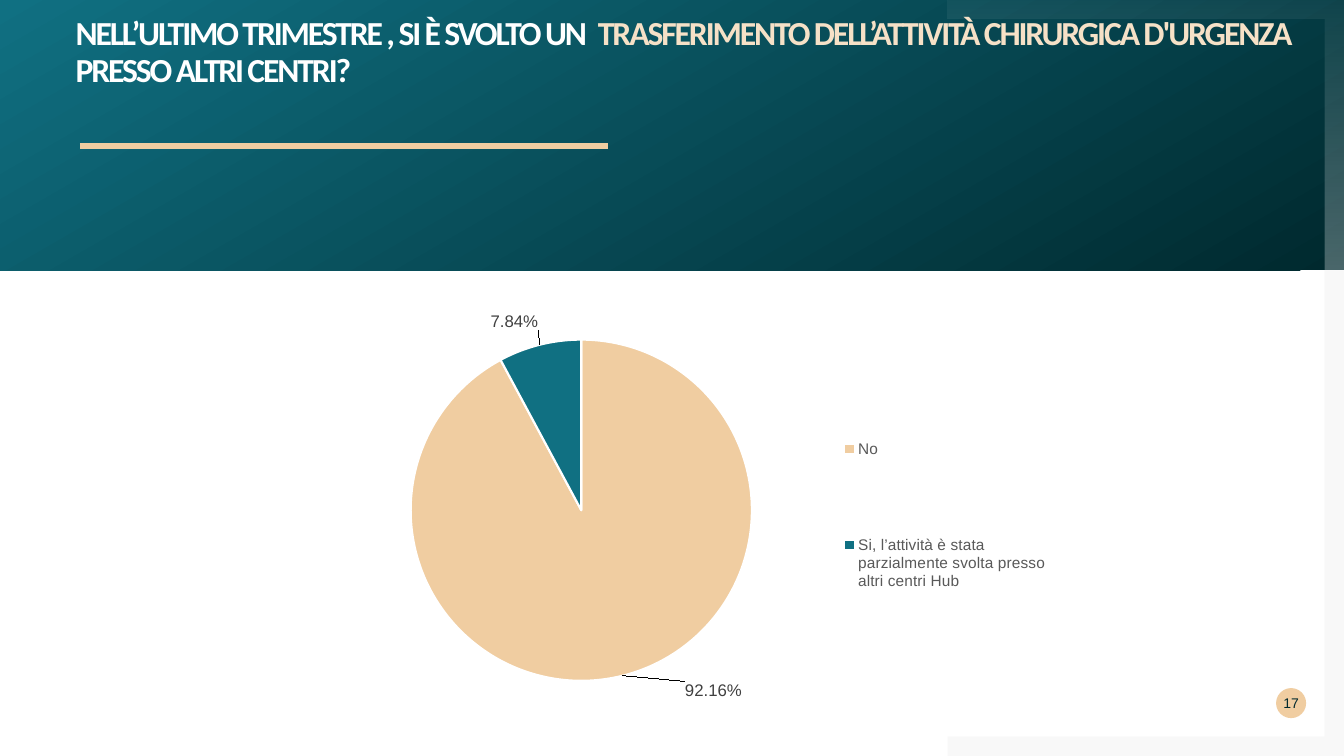
import lxml.etree
import pptx
import pptx.chart.data
import pptx.dml.color
import pptx.enum.chart
import pptx.enum.shapes
import pptx.enum.text
import pptx.oxml
import pptx.oxml.ns
import pptx.util

Pt = pptx.util.Pt
RGBColor = pptx.dml.color.RGBColor
qn = pptx.oxml.ns.qn

WHITE = RGBColor(0xFF, 0xFF, 0xFF)
GRAY = RGBColor(0x80, 0x80, 0x80)
DARK_TEAL = RGBColor(0x00, 0x29, 0x2E)
TEAL = RGBColor(0x10, 0x70, 0x82)
SAND = RGBColor(0xF0, 0xCD, 0xA1)
PALE_SAND = RGBColor(0xF6, 0xE1, 0xC7)
LABEL_GRAY = RGBColor(0x40, 0x40, 0x40)
LEGEND_GRAY = RGBColor(0x59, 0x59, 0x59)

WIDTH, HEIGHT = 960, 540
HEADER_HEIGHT = 193
FRAME_LEFT, FRAME_INNER, FRAME_THICKNESS = 677, 946, 14

TITLE_RUNS = [
    ("NELL’ULTIMO TRIMESTRE , SI È SVOLTO UN  ", WHITE),
    ("TRASFERIMENTO DELL’ATTIVITÀ CHIRURGICA D'URGENZA", PALE_SAND),
    (" PRESSO ALTRI CENTRI?", WHITE),
]
ANSWERS = [
    ("No", 92.16, SAND, (0.09, 0)),
    ("Si, l’attività è stata parzialmente svolta presso altri centri Hub", 7.84, TEAL, (0, -0.02)),
]


def set_alpha(fill_parent, percents):
    colors = fill_parent.iter(qn("a:srgbClr"))
    for color, percent in zip(colors, percents):
        alpha = lxml.etree.SubElement(color, qn("a:alpha"))
        alpha.set("val", str(percent * 1000))


def fill_gradient(shape, start, end, angle):
    shape.fill.gradient()
    shape.fill.gradient_angle = angle
    for stop, color, position in zip(shape.fill.gradient_stops, (start, end), (0, 1)):
        stop.color.rgb = color
        stop.position = position


def add_plain_shape(slide, kind, left, top, width, height):
    shape = slide.shapes.add_shape(kind, Pt(left), Pt(top), Pt(width), Pt(height))
    shape.shadow.inherit = False
    shape.line.fill.background()
    return shape


def add_outline(slide, points):
    corners = [(Pt(x), Pt(y)) for x, y in points]
    builder = slide.shapes.build_freeform(*corners[0])
    builder.add_line_segments(corners[1:], close=True)
    shape = builder.convert_to_shape()
    shape.shadow.inherit = False
    shape.line.fill.background()
    return shape


def add_frame_corner(slide, inner_y, outer_y, side_y):
    return add_outline(slide, [
        (FRAME_LEFT, outer_y), (WIDTH, outer_y), (WIDTH, side_y),
        (FRAME_INNER, side_y), (FRAME_INNER, inner_y), (FRAME_LEFT, inner_y),
    ])


def add_background(slide):
    lower = add_frame_corner(slide, HEIGHT - FRAME_THICKNESS, HEIGHT, HEADER_HEIGHT)
    lower.fill.solid()
    lower.fill.fore_color.rgb = GRAY
    set_alpha(lower.element.spPr, [5])
    rectangle = pptx.enum.shapes.MSO_SHAPE.RECTANGLE
    header = add_plain_shape(slide, rectangle, 0, 0, WIDTH, HEADER_HEIGHT)
    fill_gradient(header, DARK_TEAL, TEAL, 120)
    upper = add_frame_corner(slide, FRAME_THICKNESS, 0, HEADER_HEIGHT)
    fill_gradient(upper, WHITE, WHITE, 270)
    set_alpha(upper.element.spPr, [5, 30])


def clear_margins(frame):
    frame.margin_left = frame.margin_right = frame.margin_top = frame.margin_bottom = 0


def format_title(slide):
    title = slide.shapes.title
    title.left, title.top, title.width, title.height = Pt(54), Pt(12), Pt(879), Pt(85)
    title.element.getparent().append(title.element)
    frame = title.text_frame
    clear_margins(frame)
    frame.word_wrap = True
    frame.auto_size = pptx.enum.text.MSO_AUTO_SIZE.NONE
    frame.vertical_anchor = pptx.enum.text.MSO_ANCHOR.TOP
    paragraph = frame.paragraphs[0]
    paragraph.alignment = pptx.enum.text.PP_ALIGN.LEFT
    paragraph.line_spacing = 0.9
    paragraph.font.size = Pt(24)
    paragraph.font.name = "Calibri"
    paragraph.font.bold = True
    for text, color in TITLE_RUNS:
        run = paragraph.add_run()
        run.text = text
        run.font.color.rgb = color
        run.font.size = Pt(24)
        run.font.name = "Calibri"
        run.font.bold = True
        run.font._element.set("spc", "-150")


def add_page_badge(slide, number):
    badge = add_plain_shape(slide, pptx.enum.shapes.MSO_SHAPE.OVAL, 911.5, 491.5, 21.5, 21.5)
    badge.fill.solid()
    badge.fill.fore_color.rgb = SAND
    frame = badge.text_frame
    clear_margins(frame)
    frame.word_wrap = False
    frame.vertical_anchor = pptx.enum.text.MSO_ANCHOR.MIDDLE
    paragraph = frame.paragraphs[0]
    paragraph.text = number
    paragraph.alignment = pptx.enum.text.PP_ALIGN.CENTER
    set_font(paragraph.font, 10, DARK_TEAL)


def add_rule(slide, left, right, y):
    straight = pptx.enum.shapes.MSO_CONNECTOR.STRAIGHT
    rule = slide.shapes.add_connector(straight, Pt(left), Pt(y), Pt(right), Pt(y))
    rule.line.color.rgb = SAND
    rule.line.width = Pt(4.32)
    lxml.etree.SubElement(rule.element.spPr, qn("a:effectLst"))


def set_font(font, size, color):
    font.name = "Arial"
    font.size = Pt(size)
    font.color.rgb = color


def make_layout(**settings):
    layout = pptx.oxml.parse_xml(
        f'<c:layout {pptx.oxml.ns.nsdecls("c")}><c:manualLayout/></c:layout>')
    for name, value in settings.items():
        lxml.etree.SubElement(layout[0], qn(f"c:{name}")).set("val", str(value))
    return layout


def replace_layout(parent, index, layout):
    for old in parent.findall(qn("c:layout")):
        parent.remove(old)
    parent.insert(index, layout)


def format_slice(point, color, shift):
    point.format.fill.solid()
    point.format.fill.fore_color.rgb = color
    point.format.line.color.rgb = WHITE
    point.format.line.width = Pt(1.5)
    label = point.data_label
    set_font(label.font, 12, LABEL_GRAY)
    label.position = pptx.enum.chart.XL_LABEL_POSITION.OUTSIDE_END
    element = label.font._element
    while element.tag != qn("c:dLbl"):
        element = element.getparent()
    replace_layout(element, 1, make_layout(x=shift[0], y=shift[1]))
    number_format = pptx.oxml.parse_xml(
        f'<c:numFmt {pptx.oxml.ns.nsdecls("c")} formatCode="0.00%" sourceLinked="0"/>')
    element.insert(2, number_format)
    element.find(qn("c:showVal")).set("val", "0")
    element.find(qn("c:showPercent")).set("val", "1")


def add_answer_chart(slide):
    data = pptx.chart.data.CategoryChartData()
    data.categories = [answer[0] for answer in ANSWERS]
    data.add_series("Series 1", [answer[1] for answer in ANSWERS])
    chart = slide.shapes.add_chart(
        pptx.enum.chart.XL_CHART_TYPE.PIE, Pt(278), Pt(214.5), Pt(481.5), Pt(312.5), data).chart
    chart.has_title = False
    chart.font.name = "Arial"
    chart.font.size = Pt(10)
    chart.has_legend = True
    legend = chart.legend
    legend.position = pptx.enum.chart.XL_LEGEND_POSITION.RIGHT
    legend.include_in_layout = False
    set_font(legend.font, 11, LEGEND_GRAY)
    replace_layout(legend._element, 1, make_layout(
        xMode="edge", yMode="edge", x=0.66, y=0.14, w=0.33, h=0.7))
    plot = chart.plots[0]
    plot.vary_by_categories = True
    replace_layout(plot._element.getparent(), 0, make_layout(
        layoutTarget="inner", xMode="edge", yMode="edge", x=0.03, y=0.09, w=0.51, h=0.78))
    labels = plot.series[0].data_labels
    labels.show_value = False
    labels.show_percentage = True
    labels.number_format = "0.00%"
    labels.number_format_is_linked = False
    set_font(labels.font, 12, LABEL_GRAY)
    for index, (_, _, color, shift) in enumerate(ANSWERS):
        format_slice(plot.series[0].points[index], color, shift)


def main():
    presentation = pptx.Presentation()
    presentation.slide_width, presentation.slide_height = Pt(WIDTH), Pt(HEIGHT)
    slide = presentation.slides.add_slide(presentation.slide_layouts[5])
    add_background(slide)
    format_title(slide)
    add_page_badge(slide, "17")
    add_rule(slide, 57, 434, 104.5)
    add_answer_chart(slide)
    presentation.save("out.pptx")


if __name__ == "__main__":
    main()
